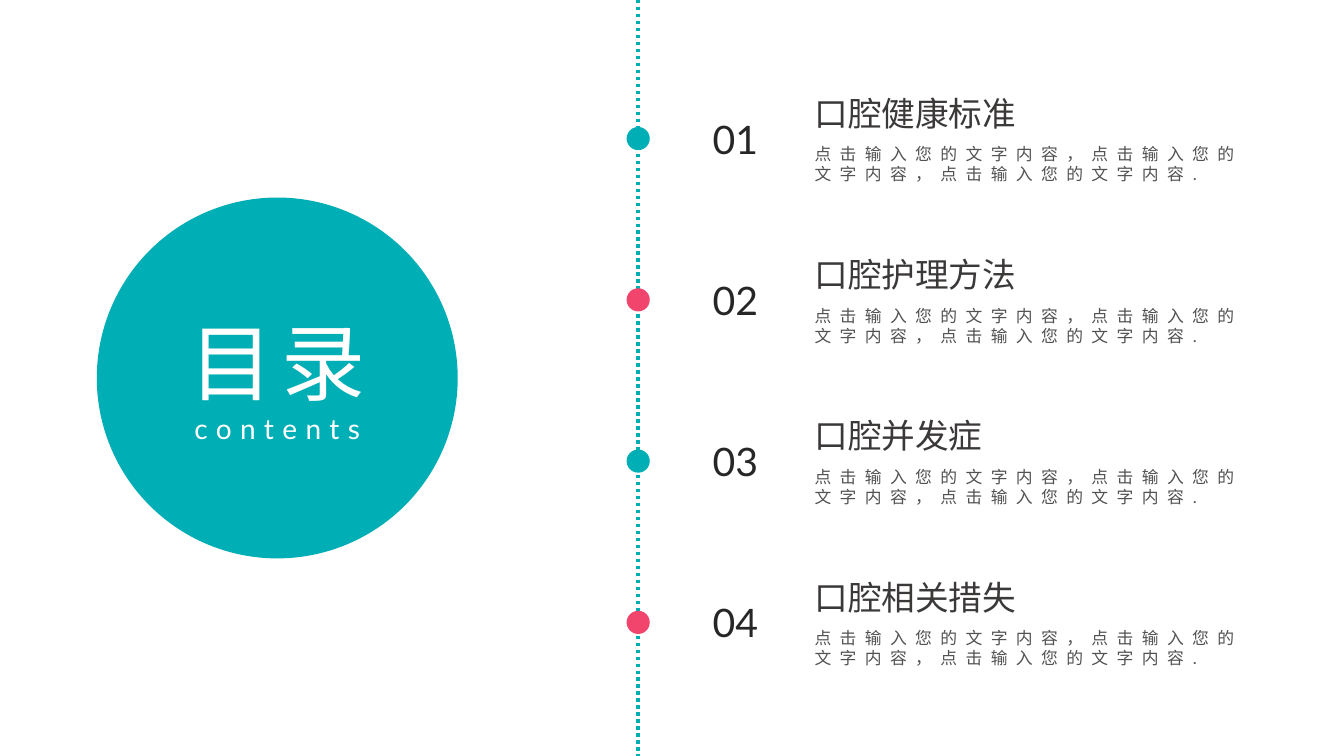
from dataclasses import dataclass

from lxml import etree
from pptx import Presentation
from pptx.dml.color import RGBColor
from pptx.enum.dml import MSO_LINE
from pptx.enum.shapes import MSO_CONNECTOR, MSO_SHAPE
from pptx.enum.text import MSO_ANCHOR, MSO_AUTO_SIZE, PP_ALIGN
from pptx.oxml.ns import qn
from pptx.util import Inches, Pt

FONT = "Lato"
TEAL, PINK, WHITE = "00AEB5", "F2456E", "FFFFFF"
DESCRIPTION = "点击输入您的文字内容，点击输入您的文字内容，点击输入您的文字内容."
FIRST_TOP, ENTRY_STEP = 0.87, 1.6
AXIS_X, DOT_SIZE = 6.33, 0.23


@dataclass
class TextStyle:
    size: float
    color: str
    spacing: int = 0  # between letters, in points


@dataclass
class Entry:
    number: str
    heading: str
    dot_color: str


HEADING = TextStyle(24, "3B3838")
BODY = TextStyle(12, "525252", 6)
NUMBER = TextStyle(28, "262626")
ENTRIES = [
    Entry("01", "口腔健康标准", TEAL),
    Entry("02", "口腔护理方法", PINK),
    Entry("03", "口腔并发症", TEAL),
    Entry("04", "口腔相关措失", PINK),
]


def rgb(value: str) -> RGBColor:
    return RGBColor.from_string(value)


def format_paragraph(paragraph, style: TextStyle) -> None:
    for run in paragraph.runs:
        run.font.size = Pt(style.size)
        run.font.name = FONT
        run.font.color.rgb = rgb(style.color)
        properties = run.font._element
        east_asian = etree.SubElement(properties, qn("a:ea"))
        east_asian.set("typeface", FONT)
        if style.spacing:
            properties.set("spc", str(style.spacing * 100))


def add_text(shapes, text: str, left: float, top: float, width: float,
             height: float, style: TextStyle) -> None:
    box = shapes.add_textbox(Inches(left), Inches(top), Inches(width), Inches(height))
    box.text_frame.word_wrap = True
    box.text_frame.text = text
    format_paragraph(box.text_frame.paragraphs[0], style)


def add_circle(shapes, left: float, top: float, size: float, color: str):
    circle = shapes.add_shape(MSO_SHAPE.OVAL, Inches(left), Inches(top),
                              Inches(size), Inches(size))
    circle.shadow.inherit = False
    circle.fill.solid()
    circle.fill.fore_color.rgb = rgb(color)
    circle.line.fill.background()
    return circle


def add_axis(slide, height: int) -> None:
    axis = slide.shapes.add_connector(MSO_CONNECTOR.STRAIGHT, Inches(AXIS_X), 0,
                                      Inches(AXIS_X), height)
    axis.line.color.rgb = rgb(TEAL)
    axis.line.width = Pt(2.5)
    axis.line.dash_style = MSO_LINE.ROUND_DOT
    etree.SubElement(axis._element.spPr, qn("a:effectLst"))


def add_title(slide) -> None:
    left, top, size = 0.96, 1.96, 3.58
    circle = add_circle(slide.shapes, left, top, size, TEAL)
    title = slide.shapes.title
    circle._element.addnext(title._element)  # title in front of its circle
    title.left, title.top = Inches(left), Inches(top)
    title.width = title.height = Inches(size)
    frame = title.text_frame
    frame.text = "目录\ncontents"
    frame.auto_size = MSO_AUTO_SIZE.NONE
    frame.vertical_anchor = MSO_ANCHOR.MIDDLE
    for paragraph, points in zip(frame.paragraphs, (60, 20)):
        paragraph.alignment = PP_ALIGN.CENTER
        format_paragraph(paragraph, TextStyle(points, WHITE, 6))


def add_entry(slide, entry: Entry, top: float) -> None:
    shapes = slide.shapes.add_group_shape().shapes
    add_circle(shapes, AXIS_X - DOT_SIZE / 2, top + 0.39, DOT_SIZE, entry.dot_color)
    add_text(shapes, entry.heading, 7.98, top, 3.84, 0.5, HEADING)
    add_text(shapes, DESCRIPTION, 7.98, top + 0.51, 4.49, 0.5, BODY)
    add_text(shapes, entry.number, 6.97, top + 0.22, 0.9, 0.57, NUMBER)


def main() -> None:
    presentation = Presentation()
    presentation.slide_width = Inches(13.33)
    presentation.slide_height = Inches(7.5)
    slide = presentation.slides.add_slide(presentation.slide_layouts[5])  # title only

    # Dotted axis and title circle
    add_axis(slide, presentation.slide_height)
    add_title(slide)

    # Contents list
    for index, entry in enumerate(ENTRIES):
        add_entry(slide, entry, FIRST_TOP + index * ENTRY_STEP)

    presentation.save("out.pptx")


if __name__ == "__main__":
    main()
